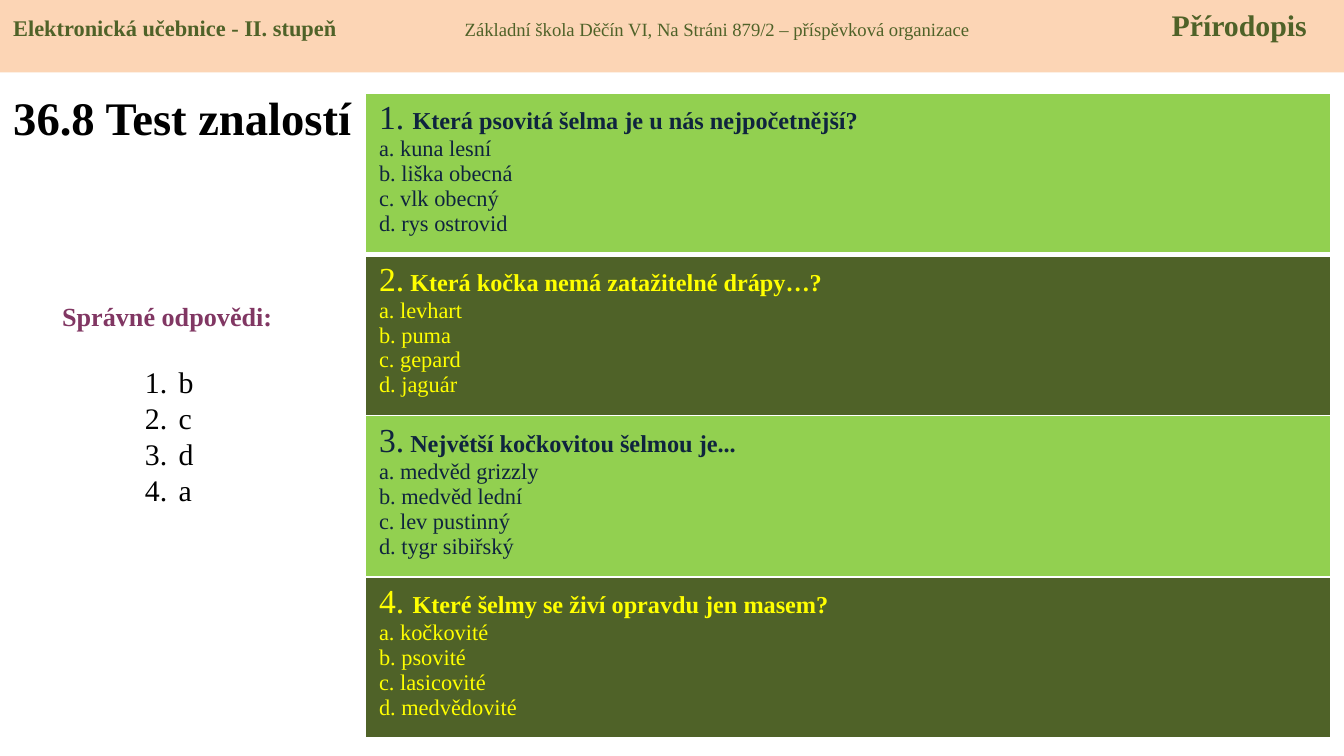
"""Build a biology quiz slide with four questions and their answers."""
import dataclasses
from typing import Any

import pptx
import pptx.dml.color
import pptx.enum.shapes
import pptx.enum.text
import pptx.oxml.ns
import pptx.util
from lxml import etree

WIDTH = pptx.util.Inches(10)
HEIGHT = pptx.util.Inches(5.625)
FACE = "Times New Roman"
OLIVE, LIME, NAVY, YELLOW = "4F6228", "92D050", "0F243E", "FFFF00"
PEACH, PLUM, BLACK, WHITE = "FCD5B5", "813763", "000000", "FFFFFF"
ALIGN = pptx.enum.text.PP_ALIGN
ANCHOR = pptx.enum.text.MSO_ANCHOR


@dataclasses.dataclass(frozen=True)
class Area:
    """Place on the slide, in percent of its width and height."""

    left: float
    top: float
    width: float
    height: float

    def lengths(self) -> tuple[int, int, int, int]:
        """Return left, top, width and height as slide lengths."""
        sides = (self.left, WIDTH), (self.top, HEIGHT), (self.width, WIDTH), (self.height, HEIGHT)
        return tuple(round(share * whole / 100) for share, whole in sides)


@dataclasses.dataclass(frozen=True)
class Span:
    """Piece of text in one format."""

    text: str
    size: float
    color: str
    bold: bool = False


@dataclasses.dataclass(frozen=True)
class Question:
    """Quiz question with its choices."""

    number: str
    prompt: str
    choices: tuple[str, ...]


@dataclasses.dataclass(frozen=True)
class Scheme:
    """Fill and text colour of a question."""

    fill: str
    ink: str


QUESTIONS = (
    Question("1. ", "Která psovitá šelma je u nás nejpočetnější?",
             ("kuna lesní", "liška obecná", "vlk obecný", "rys ostrovid")),
    Question("2.", " Která kočka nemá zatažitelné drápy…?",
             ("levhart", "puma", "gepard", "jaguár")),
    Question("3.", " Největší kočkovitou šelmou je...",
             ("medvěd grizzly", "medvěd lední", "lev pustinný", "tygr sibiřský")),
    Question("4. ", "Které šelmy se živí opravdu jen masem?",
             ("kočkovité", "psovité", "lasicovité", "medvědovité")),
)
SCHEMES = (Scheme(LIME, NAVY), Scheme(OLIVE, YELLOW))
ANSWERS = "bcda"
HEADER_TABS = (33.6, 86.2)
INDENT = pptx.util.Inches(0.25)


def paint(fill: Any, color: str) -> None:
    """Give a fill one solid colour."""
    fill.solid()
    fill.fore_color.rgb = pptx.dml.color.RGBColor.from_string(color)


def add_element(parent: Any, tag: str, **values: Any) -> Any:
    """Append an XML element with the given attributes."""
    names = {name: str(value) for name, value in values.items()}
    return etree.SubElement(parent, pptx.oxml.ns.qn(tag), names)


def write_spans(para: Any, spans: tuple[Span, ...]) -> None:
    """Write spans into a paragraph."""
    for span in spans:
        run = para.add_run()
        run.text = span.text
        values = {"name": FACE, "size": pptx.util.Pt(span.size), "bold": span.bold}
        for name, value in values.items():
            setattr(run.font, name, value)
        paint(run.font.fill, span.color)


def write_lines(frame: Any, lines: list[tuple[Span, ...]], align: Any = ALIGN.LEFT) -> None:
    """Write one paragraph for each line of spans."""
    for index, spans in enumerate(lines):
        para = frame.add_paragraph() if index else frame.paragraphs[0]
        para.alignment = align
        write_spans(para, spans)


def add_text(page: Any, area: Area, lines: list[tuple[Span, ...]],
             align: Any = ALIGN.LEFT, **format_values: Any) -> Any:
    """Add a text box and return its text frame."""
    frame = page.shapes.add_textbox(*area.lengths()).text_frame
    for name, value in ({"word_wrap": True} | format_values).items():
        setattr(frame, name, value)
    write_lines(frame, lines, align)
    return frame


def add_header(page: Any) -> None:
    """Draw the header band with three tabbed labels."""
    rectangle = pptx.enum.shapes.MSO_SHAPE.RECTANGLE
    band = page.shapes.add_shape(rectangle, *Area(0, 0, 100, 9.6).lengths())
    band.shadow.inherit = False
    paint(band.fill, PEACH)
    band.line.fill.background()
    frame = band.text_frame
    frame.vertical_anchor = ANCHOR.TOP
    para = frame.paragraphs[0]
    para.alignment = ALIGN.LEFT
    stops = add_element(para._p.get_or_add_pPr(), "a:tabLst")
    for share in HEADER_TABS:
        add_element(stops, "a:tab", pos=round(WIDTH * share / 100), algn="l")
    write_spans(para, (
        Span("Elektronická učebnice - II. stupeň\t", 12, OLIVE, True),
        Span("Základní škola Děčín VI, Na Stráni 879/2 – příspěvková organizace\t", 10, OLIVE),
        Span("Přírodopis", 16, OLIVE, True),
    ))


def add_answers(page: Any) -> None:
    """Draw the answer heading and the numbered answers."""
    add_text(page, Area(3.5, 38.8, 17.9, 6), [(Span("Správné odpovědi:", 14, PLUM, True),)],
             ALIGN.CENTER, word_wrap=False)
    lines = [(Span(answer, 16, BLACK),) for answer in ANSWERS]
    frame = add_text(page, Area(9.8, 47.3, 4.8, 21), lines)
    for para in frame.paragraphs:
        properties = para._p.get_or_add_pPr()
        properties.set("marL", str(INDENT))
        properties.set("indent", str(-INDENT))
        add_element(properties, "a:buFont", typeface="+mj-lt")
        add_element(properties, "a:buAutoNum", type="arabicPeriod")


def add_borders(cell: Any, widths: dict[str, float]) -> None:
    """Draw white borders around a table cell."""
    properties = cell._tc.get_or_add_tcPr()
    for side, width in widths.items():
        line = add_element(properties, f"a:ln{side}", w=pptx.util.Pt(width))
        add_element(add_element(line, "a:solidFill"), "a:srgbClr", val=WHITE)


def add_questions(page: Any) -> None:
    """Draw the questions as a one-column table."""
    area = Area(27.2, 12.3, 71.8, 85.3)
    table = page.shapes.add_table(len(QUESTIONS), 1, *area.lengths()).table
    for index, question in enumerate(QUESTIONS):
        scheme = SCHEMES[index % len(SCHEMES)]
        cell = table.cell(index, 0)
        top, bottom = (3 if edge == 1 else 1 for edge in (index, index + 1))
        add_borders(cell, {"L": 1, "R": 1, "T": top, "B": bottom})
        paint(cell.fill, scheme.fill)
        heading = (Span(question.number, 18, scheme.ink),
                   Span(question.prompt, 13, scheme.ink, True))
        choices = [(Span(f"{letter}. {choice}", 12, scheme.ink),)
                   for letter, choice in zip("abcd", question.choices)]
        write_lines(cell.text_frame, [heading, *choices])


def main() -> None:
    """Build and save the deck."""
    deck = pptx.Presentation()
    deck.slide_width, deck.slide_height = WIDTH, HEIGHT
    page = deck.slides.add_slide(deck.slide_layouts[6])
    paint(page.background.fill, WHITE)
    add_text(page, Area(0, 9.6, 31.9, 11.6), [(Span("36.8 Test znalostí", 25, BLACK, True),)],
             vertical_anchor=ANCHOR.MIDDLE)
    add_header(page)
    add_answers(page)
    add_questions(page)
    deck.save("out.pptx")


if __name__ == "__main__":
    main()
